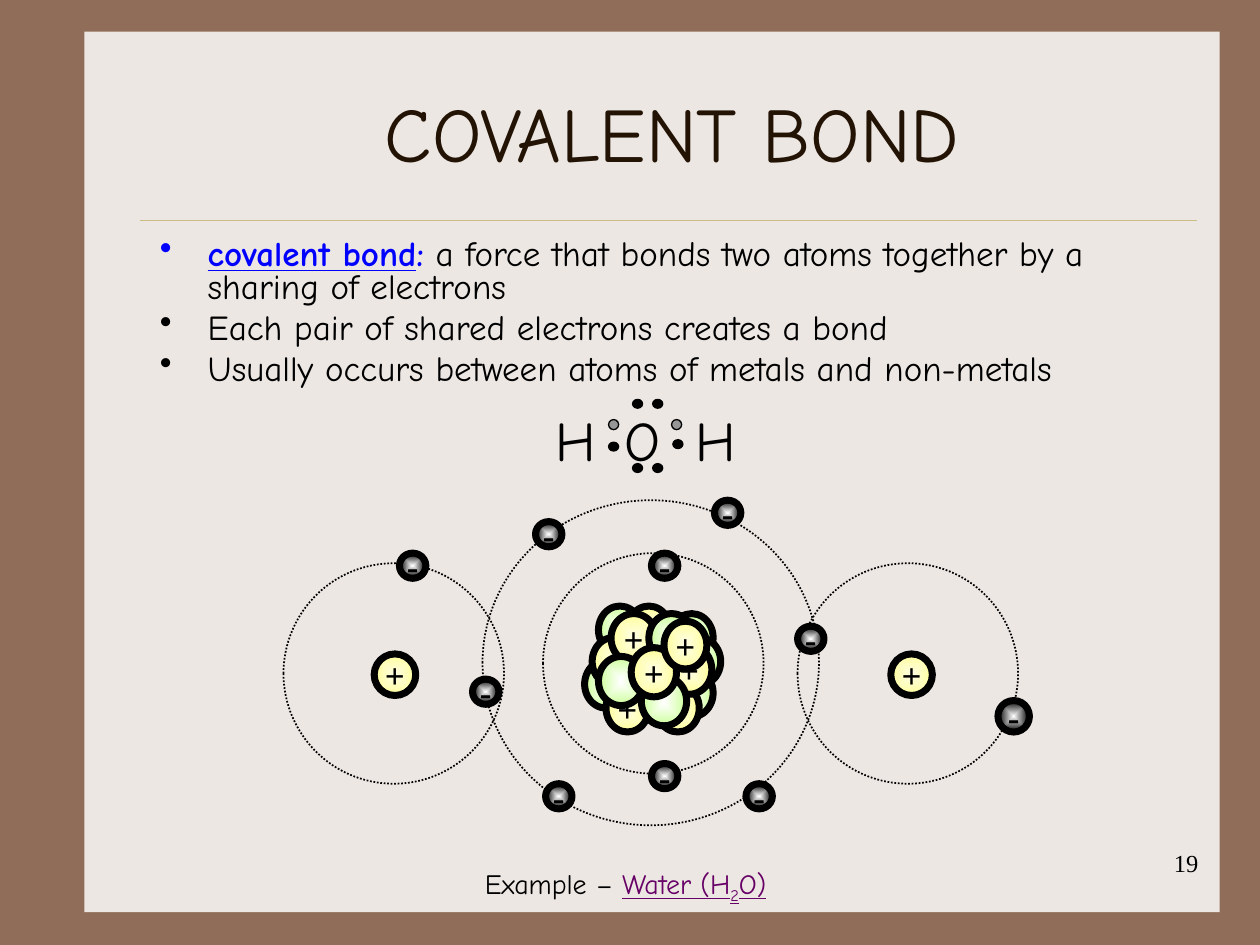
from lxml.etree import SubElement
from pptx import Presentation
from pptx.dml.color import RGBColor
from pptx.enum.dml import MSO_LINE
from pptx.enum.shapes import MSO_CONNECTOR, MSO_SHAPE
from pptx.enum.text import MSO_ANCHOR as ANCHOR, PP_ALIGN as ALIGN
from pptx.oxml.ns import qn
from pptx.util import Inches, Pt

HAND, SERIF = "Comic Neue", "Times New Roman"
BLACK, GREY, BLUE, PURPLE = "000000", "969696", "0000FF", "660066"
PROTON, NEUTRON, ELECTRON = ("FEFDE3", "FFFF99"), ("FFFFFF", "CCFF99"), ("FFFFFF", BLACK)
SMALL, LARGE = (0.34, 0.38), (0.36, 0.39)


def rgb(value):
    return RGBColor.from_string(value)


def add_run(p, text, font=HAND, size=20, color=BLACK, bold=False, underline=False, base=0):
    r = p.add_run()
    r.text = text
    r.font.name = font
    r.font.size = Pt(size)
    r.font.color.rgb = rgb(color)
    r.font.bold = bold
    r.font.underline = underline
    if base:
        r.font._element.set("baseline", str(base * 1000))


class Slide:
    def __init__(self, prs, background):
        self.s = prs.slides.add_slide(prs.slide_layouts[6])
        self.s.background.fill.solid()
        self.s.background.fill.fore_color.rgb = rgb(background)
        self.shapes = self.s.shapes

    def start_group(self):
        self.shapes = self.s.shapes.add_group_shape().shapes

    def end_group(self):
        self.shapes = self.s.shapes

    def shape(self, x, y, w, h, fill=None, line=None, width=0.75, dash=None, kind=MSO_SHAPE.OVAL):
        sp = self.shapes.add_shape(kind, Inches(x), Inches(y), Inches(w), Inches(h))
        sp.shadow.inherit = False
        if fill is None:
            sp.fill.background()
        elif isinstance(fill, tuple):
            self.radial(sp, fill)
        else:
            sp.fill.solid()
            sp.fill.fore_color.rgb = rgb(fill)
        if line is None:
            sp.line.fill.background()
        else:
            sp.line.color.rgb = rgb(line)
            sp.line.width = Pt(width)
            if dash:
                sp.line.dash_style = dash
        return sp

    def radial(self, sp, colors):
        sp.fill.gradient()
        for stop, position, color in zip(sp.fill.gradient_stops, (0, 1), colors):
            stop.position = position
            stop.color.rgb = rgb(color)
        grad = sp._element.spPr.find(qn("a:gradFill"))
        grad.remove(grad.find(qn("a:lin")))
        shade = SubElement(grad, qn("a:path"), {"path": "shape"})
        SubElement(shade, qn("a:fillToRect"), dict.fromkeys("ltrb", "50000"))

    def particle(self, x, y, w, h, colors, sign=""):
        sp = self.shape(x, y, w, h, colors, BLACK, 4)
        if sign:
            tf = sp.text_frame
            tf.word_wrap = False
            tf.vertical_anchor = ANCHOR.MIDDLE
            p = tf.paragraphs[0]
            p.alignment = ALIGN.CENTER
            add_run(p, sign, font=SERIF, bold=True)

    def orbit(self, x, y, w, h):
        self.shape(x, y, w, h, line=BLACK, width=1, dash=MSO_LINE.ROUND_DOT)

    def rule(self, x1, y1, x2, y2, color, width):
        c = self.shapes.add_connector(MSO_CONNECTOR.STRAIGHT, Inches(x1), Inches(y1), Inches(x2), Inches(y2))
        c.line.color.rgb = rgb(color)
        c.line.width = Pt(width)
        SubElement(c._element.spPr, qn("a:effectLst"))

    def text(self, x, y, w, h, paragraphs, align=ALIGN.LEFT, anchor=ANCHOR.TOP, wrap=True, bullets=False):
        tf = self.shapes.add_textbox(Inches(x), Inches(y), Inches(w), Inches(h)).text_frame
        tf.word_wrap = wrap
        tf.vertical_anchor = anchor
        for i, runs in enumerate(paragraphs):
            p = tf.add_paragraph() if i else tf.paragraphs[0]
            p.alignment = align
            if bullets:
                self.bullet(p, first=i == 0)
            for text, style in runs:
                add_run(p, text, **style)

    def bullet(self, p, first):
        p.line_spacing = 0.8
        if not first:
            p.space_before = Pt(4)
        pPr = p._p.get_or_add_pPr()
        pPr.set("marL", str(Inches(0.38)))
        pPr.set("indent", str(-Inches(0.38)))
        SubElement(pPr, qn("a:buChar"), {"char": "•"})

    def letter(self, x, w, char):
        self.text(x, 3.17, w, 0.63, [[(char, dict(size=32))]])


def build_text(slide):
    slide.shape(0.67, 0.25, 9.01, 6.99, "EDE7E3", kind=MSO_SHAPE.RECTANGLE)
    slide.rule(1.11, 1.75, 9.5, 1.75, "CBBD83", 0.25)
    slide.text(1.17, 0.42, 8.33, 1.25, [[("COVALENT BOND", dict(size=44, color="221304"))]],
               align=ALIGN.CENTER, anchor=ANCHOR.MIDDLE)
    slide.text(1.17, 1.85, 8.33, 1.42, [
        [("covalent bond", dict(color=BLUE, bold=True, underline=True)),
         (":", dict(color=BLUE, bold=True)),
         (" a force that bonds two atoms together by a sharing of electrons", {})],
        [("Each pair of shared electrons creates a bond", {})],
        [("Usually occurs between atoms of metals and non-metals", {})],
    ], bullets=True)


def build_atoms(slide):
    for x in (2.97, 7.07):
        slide.particle(x, 5.19, 0.33, 0.33, PROTON, "+")

    nucleus = [
        (NEUTRON, SMALL, [(5.32, 4.87), (4.64, 5.24), (5.38, 5.06), (5.32, 5.31), (4.75, 4.81)]),
        (PROTON, SMALL, [(5.21, 5.43), (4.98, 4.81), (4.7, 5.06), (4.81, 5.43)]),
        (PROTON, LARGE, [(4.85, 4.87)]),
        (NEUTRON, LARGE, [(5.15, 4.87)]),
        (PROTON, LARGE, [(5.29, 5.12)]),
        (NEUTRON, LARGE, [(4.75, 5.21), (5.09, 5.37)]),
        (PROTON, LARGE, [(5.01, 5.14)]),
        (PROTON, SMALL, [(5.27, 4.93)]),
    ]
    slide.start_group()
    for colors, size, places in nucleus:
        for x, y in places:
            slide.particle(x, y, *size, colors, "+" if colors == PROTON else "")
    slide.end_group()

    link = dict(size=16, color=PURPLE, underline=True)
    slide.text(3.75, 6.83, 2.64, 0.37, [[
        ("Example – ", dict(size=16)), ("Water (H", link), ("2", dict(link, base=-25)), ("O)", link),
    ]], wrap=False)

    slide.orbit(4.31, 4.39, 1.75, 1.75)
    slide.orbit(3.83, 3.97, 2.67, 2.58)
    for x in (2.25, 6.33):
        slide.orbit(x, 4.47, 1.75, 1.75)

    slide.particle(7.92, 5.56, 0.25, 0.25, ELECTRON, "-")
    for x, y in [(3.17, 4.39), (5.17, 6.06), (5.17, 4.39), (5.67, 3.97), (4.25, 4.14),
                 (6.33, 4.97), (5.92, 6.22), (4.33, 6.22), (3.75, 5.39)]:
        slide.particle(x, y, 0.21, 0.2, ELECTRON, "-")


def build_dot_formula(slide):
    slide.start_group()
    slide.letter(4.86, 0.56, "O")
    for x, y in [(5.18, 3.68), (5.02, 3.17), (5.18, 3.17), (4.83, 3.51), (5.34, 3.49), (5.02, 3.68)]:
        slide.shape(x, y, 0.08, 0.07, BLACK, BLACK)
    for dot_x, letter_x in [(4.83, 4.31), (5.33, 5.42)]:
        slide.start_group()
        slide.shape(dot_x, 3.33, 0.08, 0.08, GREY, BLACK)
        slide.letter(letter_x, 0.58, "H")
    slide.end_group()


def main():
    prs = Presentation()
    prs.slide_width, prs.slide_height = Inches(10), Inches(7.5)
    slide = Slide(prs, "906D58")
    build_text(slide)
    build_atoms(slide)
    build_dot_formula(slide)
    slide.text(7.53, 6.68, 2.08, 0.5, [[("19", dict(font=SERIF, size=14))]], align=ALIGN.RIGHT)
    prs.save("out.pptx")


if __name__ == "__main__":
    main()
